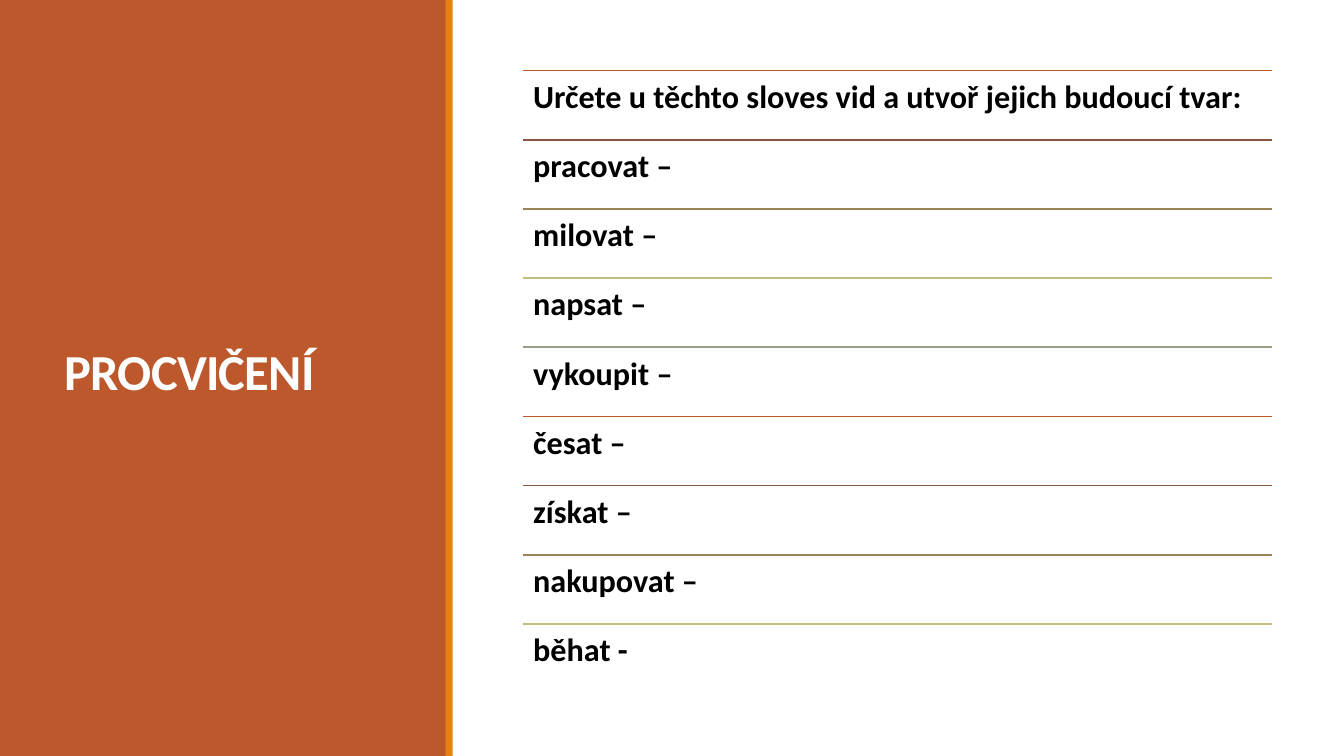
from dataclasses import dataclass

import pptx
import pptx.dml.color
import pptx.enum.shapes
import pptx.enum.text
import pptx.oxml.ns
import pptx.util
from lxml import etree
from pptx.dml.color import RGBColor
from pptx.util import Inches

RUST = RGBColor(0xBD, 0x58, 0x2C)
ORANGE = RGBColor(0xE4, 0x83, 0x12)
BROWN = RGBColor(0x86, 0x56, 0x40)
TAN = RGBColor(0x9B, 0x83, 0x57)
OLIVE = RGBColor(0xC2, 0xBC, 0x80)
SAGE = RGBColor(0x94, 0xA0, 0x88)
WHITE = RGBColor(0xFF, 0xFF, 0xFF)
BLACK = RGBColor(0x00, 0x00, 0x00)

RULE_COLORS = [RUST, BROWN, TAN, OLIVE, SAGE]
FONT = "Calibri"
LIST_LEFT, LIST_WIDTH = 5.19, 7.43
FIRST_TOP, LAST_TOP = 0.7, 6.19

EXERCISE = [
    "Určete u těchto sloves vid a utvoř jejich budoucí tvar:",
    "pracovat –",
    "milovat –",
    "napsat –",
    "vykoupit –",
    "česat –",
    "získat –",
    "nakupovat –",
    "běhat -",
]


@dataclass(frozen=True)
class Band:
    left: float
    width: float
    color: RGBColor


@dataclass(frozen=True)
class Row:
    text: str
    top: float
    height: float
    color: RGBColor


BANDS = [Band(0, 4.43, RUST), Band(4.42, 0.07, ORANGE)]


def write_text(box, text: str, *, size: float, color: RGBColor, line_spacing: float,
               anchor, inset: tuple[float, float], tracking: float = 0) -> None:
    """Fill a shape with one bold, left-aligned paragraph; tracking is in points."""
    frame = box.text_frame
    frame.word_wrap = True
    frame.auto_size = pptx.enum.text.MSO_AUTO_SIZE.NONE
    frame.vertical_anchor = anchor
    frame.margin_left = frame.margin_right = Inches(inset[0])
    frame.margin_top = frame.margin_bottom = Inches(inset[1])
    para = frame.paragraphs[0]
    para.alignment = pptx.enum.text.PP_ALIGN.LEFT
    para.line_spacing = line_spacing
    span = para.add_run()
    span.text = text
    span.font.name = FONT
    span.font.size = pptx.util.Pt(size)
    span.font.bold = True
    span.font.color.rgb = color
    if tracking:
        span._r.get_or_add_rPr().set("spc", str(round(tracking * 100)))


def draw_band(slide, band: Band) -> None:
    shape = slide.shapes.add_shape(
        pptx.enum.shapes.MSO_SHAPE.RECTANGLE,
        Inches(band.left), 0, Inches(band.width), Inches(7.5))
    shape.shadow.inherit = False
    shape.fill.solid()
    shape.fill.fore_color.rgb = band.color
    shape.line.fill.background()


def draw_title(slide, text: str) -> None:
    title = slide.shapes.title
    title.left, title.top = Inches(0.54), Inches(0.57)
    title.width, title.height = Inches(3.37), Inches(6.31)
    write_text(title, text, size=36, color=WHITE, line_spacing=0.85,
               anchor=pptx.enum.text.MSO_ANCHOR.MIDDLE, inset=(0.1, 0.05), tracking=-0.5)
    # Bring the title in front of the coloured panel
    title._element.getparent().append(title._element)


def draw_row(slide, row: Row) -> None:
    """Draw one exercise line with the coloured rule above it."""
    left, top, width = Inches(LIST_LEFT), Inches(row.top), Inches(LIST_WIDTH)
    rule = slide.shapes.add_connector(
        pptx.enum.shapes.MSO_CONNECTOR.STRAIGHT, left, top, left + width, top)
    rule.line.color.rgb = row.color
    rule.line.width = pptx.util.Pt(1.25)
    etree.SubElement(rule._element.spPr, pptx.oxml.ns.qn("a:effectLst"))
    box = slide.shapes.add_textbox(left, top, width, Inches(row.height))
    write_text(box, row.text, size=23, color=BLACK, line_spacing=0.9,
               anchor=pptx.enum.text.MSO_ANCHOR.TOP, inset=(0.1, 0.1))


def main() -> None:
    deck = pptx.Presentation()
    deck.slide_width, deck.slide_height = Inches(13.33), Inches(7.5)
    slide = deck.slides.add_slide(deck.slide_layouts.get_by_name("Title Only"))

    for band in BANDS:
        draw_band(slide, band)
    draw_title(slide, "PROCVIČENÍ")

    pitch = (LAST_TOP - FIRST_TOP) / (len(EXERCISE) - 1)
    for index, text in enumerate(EXERCISE):
        color = RULE_COLORS[index % len(RULE_COLORS)]
        draw_row(slide, Row(text, FIRST_TOP + index * pitch, pitch, color))

    deck.save("out.pptx")


if __name__ == "__main__":
    main()
